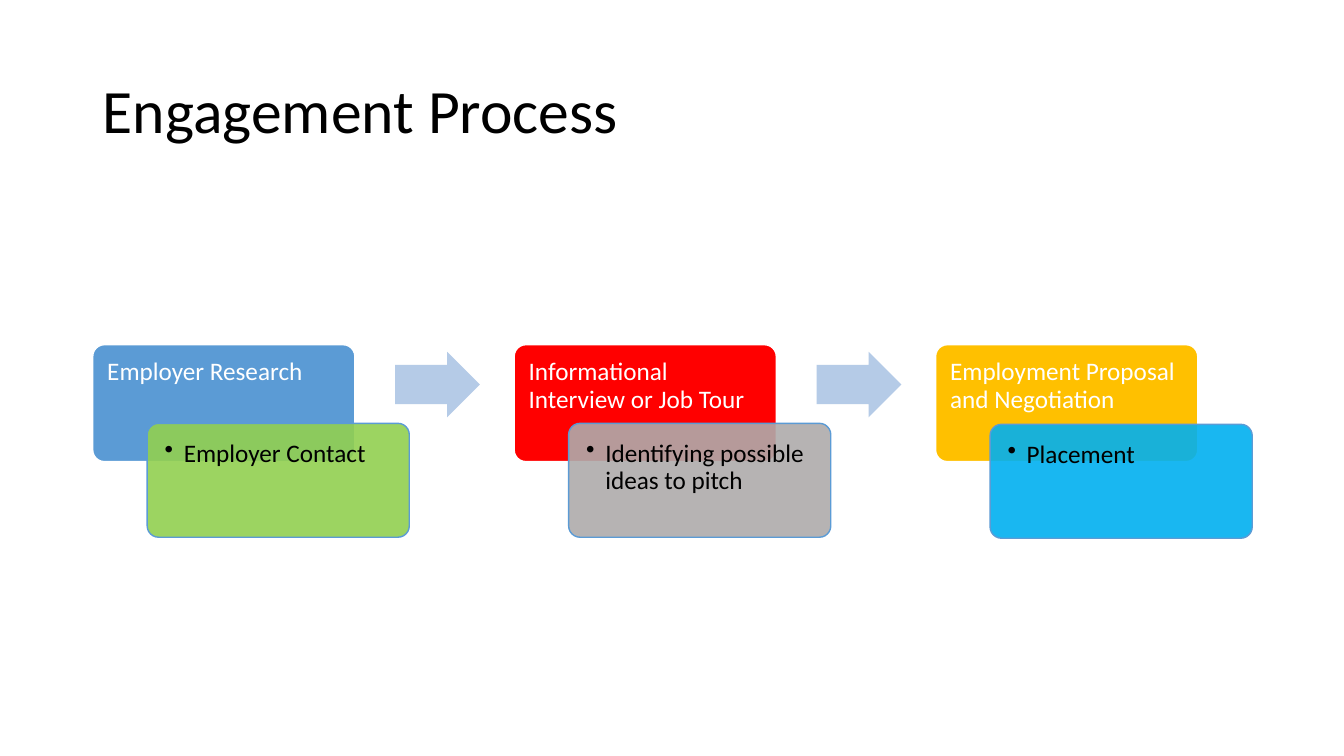
from lxml import etree
from pptx import Presentation
from pptx.dml.color import RGBColor
from pptx.enum.shapes import MSO_SHAPE
from pptx.enum.text import MSO_ANCHOR, PP_ALIGN
from pptx.oxml.ns import qn
from pptx.util import Pt

ROUND, ARROW = MSO_SHAPE.ROUNDED_RECTANGLE, MSO_SHAPE.RIGHT_ARROW
TOP, MIDDLE, LEFT = MSO_ANCHOR.TOP, MSO_ANCHOR.MIDDLE, PP_ALIGN.LEFT
PX = 9144
FONT = "Calibri"

WHITE = RGBColor(0xFF, 0xFF, 0xFF)
BLACK = RGBColor(0x00, 0x00, 0x00)
BLUE = RGBColor(0x5B, 0x9B, 0xD5)
PALE = RGBColor(0xB5, 0xCB, 0xE7)
GREEN = RGBColor(0x92, 0xD0, 0x50)
RED = RGBColor(0xFF, 0x00, 0x00)
GRAY = RGBColor(0xAF, 0xAB, 0xAB)
GOLD = RGBColor(0xFF, 0xC0, 0x00)
CYAN = RGBColor(0x00, 0xB0, 0xF0)

STEPS = [
    ("Employer Research", BLUE, "Employer Contact", GREEN, 78),
    ("Informational Interview or Job Tour", RED,
     "Identifying possible ideas to pitch", GRAY, 78),
    ("Employment Proposal and Negotiation", GOLD, "Placement", CYAN, 79),
]


def scale(*sizes):
    """Turn px lengths into EMU."""
    return [size * PX for size in sizes]


def style(para, size, color):
    """Set the font and spacing of a paragraph."""
    para.alignment = LEFT
    para.line_spacing = 0.9
    para.font.name = FONT
    para.font.size = Pt(size)
    para.font.color.rgb = color


def add_shape(slide, kind, box, fill):
    """Add a flat filled shape without an outline."""
    shape = slide.shapes.add_shape(kind, *scale(*box))
    shape.shadow.inherit = False
    shape.fill.solid()
    shape.fill.fore_color.rgb = fill
    shape.line.fill.background()
    return shape


def add_card(slide, box, text, fill, edge, ink, inset):
    """Add a rounded card with text at its top left."""
    card = add_shape(slide, ROUND, box, fill)
    card.adjustments[0] = 0.1
    card.line.color.rgb = edge
    card.line.width = Pt(1)
    frame = card.text_frame
    frame.word_wrap = True
    frame.vertical_anchor = TOP
    (frame.margin_left, frame.margin_top,
     frame.margin_right, frame.margin_bottom) = scale(*[inset] * 4)
    para = frame.paragraphs[0]
    para.text = text
    style(para, 18, ink)
    return card


def add_note(slide, box, text, fill):
    """Add a slightly clear card with one bullet."""
    card = add_card(slide, box, text, fill, BLUE, BLACK, 14)
    color = card.fill._xPr.find(qn("a:solidFill"))[0]
    etree.SubElement(color, qn("a:alpha"), val="90000")
    props = card.text_frame.paragraphs[0]._p.get_or_add_pPr()
    props.set("marL", str(19 * PX))
    props.set("indent", str(-19 * PX))
    bullet = etree.Element(qn("a:buChar"), char="•")
    props.find(qn("a:defRPr")).addprevious(bullet)


def add_title(slide, box, text):
    """Place and format the slide title."""
    title = slide.shapes.title
    title.left, title.top, title.width, title.height = scale(*box)
    title.text_frame.text = text
    title.text_frame.vertical_anchor = MIDDLE
    style(title.text_frame.paragraphs[0], 44, BLACK)


def add_flow(slide, box):
    """Lay the steps out across a box, with arrows between them."""
    left, top, width, height = box
    card = 260
    pitch = (width - card - 54) // (len(STEPS) - 1)
    for index, (head, fill, note, tint, drop) in enumerate(STEPS):
        x = left + index * pitch
        add_card(slide, (x, top, card, 116), head, fill, WHITE, WHITE, 11)
        add_note(slide, (x + 54, top + drop, card, height - 79), note, tint)
        if index < len(STEPS) - 1:
            arrow = add_shape(slide, ARROW, (x + 300, top + 7, 84, 65), PALE)
            arrow.adjustments[0] = 0.6
            arrow.adjustments[1] = 0.5


def main():
    """Build and save the slide."""
    deck = Presentation()
    deck.slide_width, deck.slide_height = scale(1333, 750)
    slide = deck.slides.add_slide(deck.slide_layouts[5])
    add_title(slide, (92, 40, 1150, 145), "Engagement Process")
    add_flow(slide, (92, 342, 1150, 192))
    deck.save("out.pptx")


if __name__ == "__main__":
    main()
